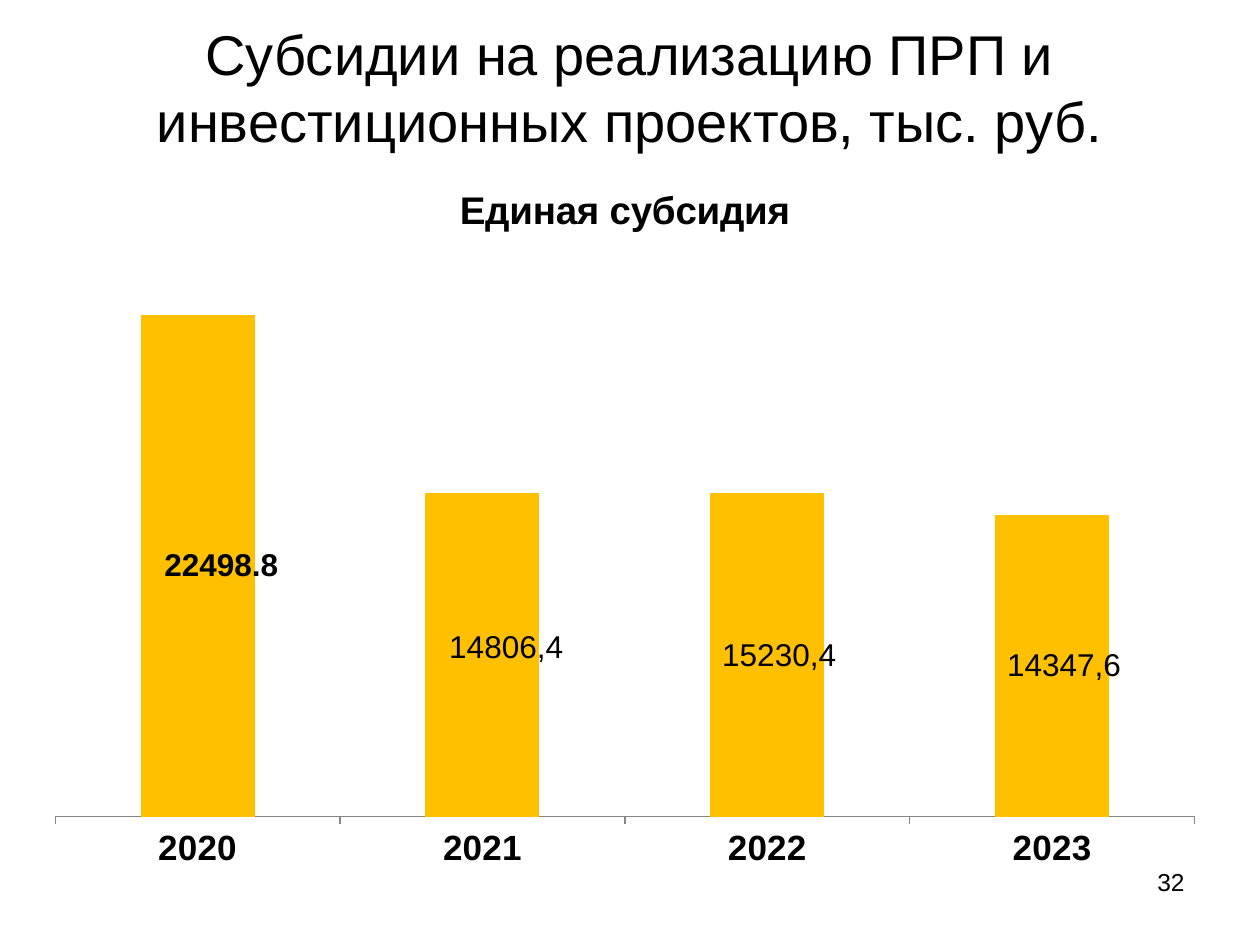
from lxml.etree import SubElement
from pptx import Presentation
from pptx.chart.data import CategoryChartData
from pptx.dml.color import RGBColor
from pptx.enum.chart import XL_CHART_TYPE as ChartType, XL_TICK_MARK as TickMark
from pptx.enum.chart import XL_LABEL_POSITION as LabelPosition
from pptx.enum.text import MSO_ANCHOR as Anchor, MSO_AUTO_SIZE as AutoSize, PP_ALIGN as Align
from pptx.oxml.ns import qn
from pptx.util import Inches, Pt


def style(font, size, bold=False, color="000000"):
    font.name = "Arial"
    font.size = Pt(size)
    font.bold = bold
    font.color.rgb = RGBColor.from_string(color)


def add_manual_layout(parent, index, **settings):
    """Place a chart part by shares of the chart's size."""
    for old_layout in parent.findall(qn("c:layout")):
        parent.remove(old_layout)
    layout = SubElement(parent, qn("c:layout"))
    parent.insert(index, layout)
    manual = SubElement(layout, qn("c:manualLayout"))
    for name, value in settings.items():
        SubElement(manual, qn(f"c:{name}")).set("val", str(value))


presentation = Presentation()
presentation.slide_width, presentation.slide_height = Inches(10), Inches(7.5)
slide = presentation.slides.add_slide(presentation.slide_layouts[5])

# Title
title = slide.shapes.title
title.left, title.top, title.width, title.height = map(Inches, (0.5, 0.3, 9, 0.78))
title_frame = title.text_frame
title_frame.text = "Субсидии на реализацию ПРП и инвестиционных проектов, тыс. руб."
title_frame.auto_size = AutoSize.NONE
title_frame.vertical_anchor = Anchor.MIDDLE
title_frame.paragraphs[0].alignment = Align.CENTER
style(title_frame.paragraphs[0].runs[0].font, 32)

# Subsidy chart
subsidy = CategoryChartData()
subsidy.categories = ["2020", "2021", "2022", "2023"]
subsidy.add_series("Единая субсидия", (22498.8, 14498.8, 14498.8, 13528.6))
chart = slide.shapes.add_chart(
    ChartType.COLUMN_STACKED, *map(Inches, (0.25, 1.25, 9.42, 5.75)), subsidy
).chart
style(chart.font, 18)
chart.has_legend = False
chart.has_title = True
chart.chart_title.include_in_layout = False
chart.chart_title.text_frame.text = "Единая субсидия"
style(chart.chart_title.text_frame.paragraphs[0].runs[0].font, 22, bold=True)
add_manual_layout(
    chart.element.xpath("c:chart/c:plotArea")[0], 0,
    layoutTarget="inner", xMode="edge", yMode="edge", x=0.02, y=0.14, w=0.96, h=0.77,
)

category_axis, value_axis = chart.category_axis, chart.value_axis
category_axis.major_tick_mark = TickMark.OUTSIDE
category_axis.format.line.color.rgb = RGBColor.from_string("868686")
style(category_axis.tick_labels.font, 20, bold=True)
value_axis.visible = False
value_axis.has_major_gridlines = False
value_axis.minimum_scale, value_axis.maximum_scale = 0, 25000

plot = chart.plots[0]
plot.gap_width, plot.overlap = 150, 100
plot.vary_by_categories = False
series = plot.series[0]
series.format.fill.solid()
series.format.fill.fore_color.rgb = RGBColor.from_string("FFC000")
series.data_labels.show_value = True
series.data_labels.position = LabelPosition.CENTER
style(series.data_labels.font, 18, bold=True)

# The first label shows its value, the others have their own wording
style(series.points[0].data_label.font, 18, bold=True)
for index, wording in enumerate(("14806,4", "15230,4", "14347,6"), start=1):
    label_frame = series.points[index].data_label.text_frame
    label_frame.text = wording
    style(label_frame.paragraphs[0].runs[0].font, 18)

label_shifts = ((0.02, 0), (0.02, -0.01), (0.01, 0), (0.01, 0))
for label, (x, y) in zip(chart.element.xpath(".//c:dLbl"), label_shifts):
    add_manual_layout(label, 1, x=x, y=y)

# Slide number
number_frame = slide.shapes.add_textbox(*map(Inches, (7.17, 6.83, 2.33, 0.52))).text_frame
number_frame.word_wrap = True
number_frame.text = "32"
number_frame.paragraphs[0].alignment = Align.RIGHT
style(number_frame.paragraphs[0].runs[0].font, 14)

presentation.save("out.pptx")
